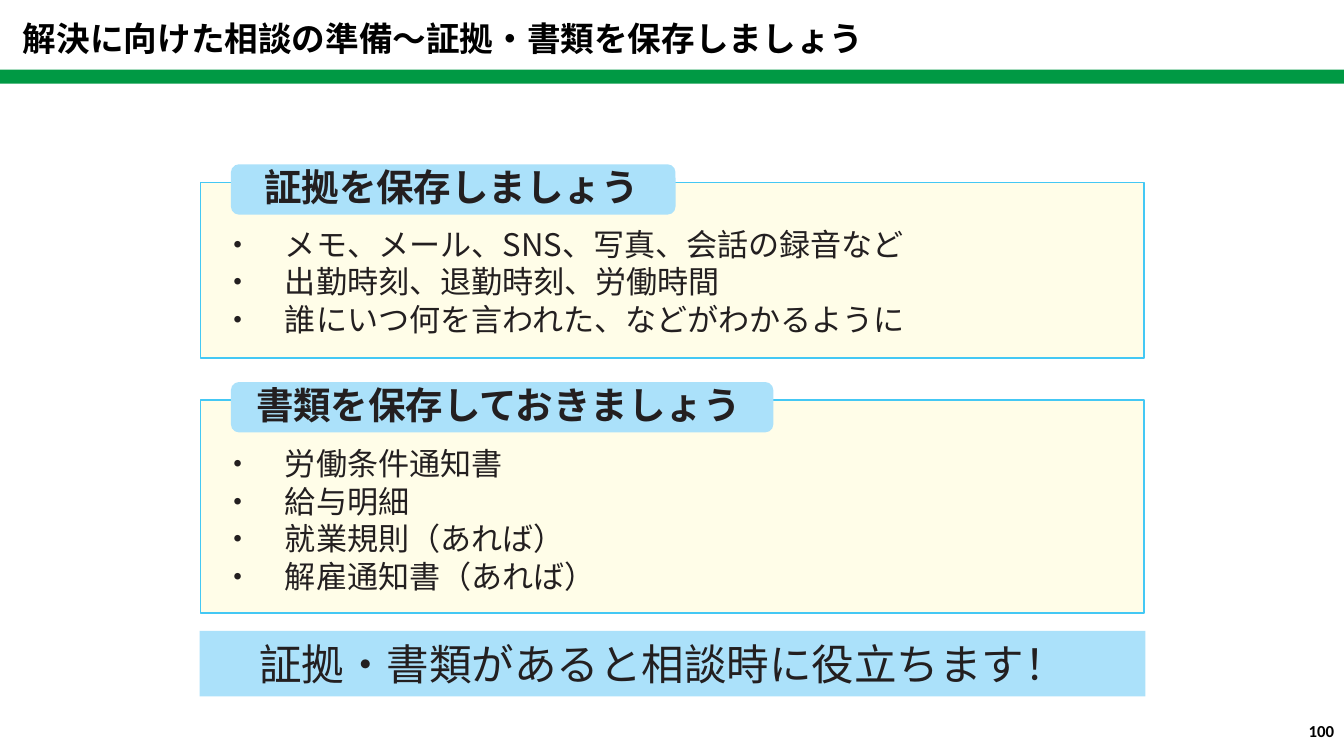
from dataclasses import dataclass

from lxml import etree
from pptx import Presentation
from pptx.dml.color import RGBColor
from pptx.enum.shapes import MSO_SHAPE
from pptx.enum.text import MSO_ANCHOR, PP_ALIGN
from pptx.oxml.ns import qn
from pptx.util import Inches, Pt

RECT = MSO_SHAPE.RECTANGLE
ROUNDED = MSO_SHAPE.ROUNDED_RECTANGLE
TOP, MIDDLE = MSO_ANCHOR.TOP, MSO_ANCHOR.MIDDLE
LEFT, RIGHT = PP_ALIGN.LEFT, PP_ALIGN.RIGHT


@dataclass(frozen=True)
class Theme:
    sky: str = "ABE1FA"
    cream: str = "FFFDE8"
    border: str = "44C8F4"
    green: str = "009944"
    ink: str = "231F20"
    black: str = "000000"
    japanese: str = "Noto Sans CJK JP"
    latin: str = "Calibri"
    title: float = 24
    heading: float = 26.8
    body: float = 22.2
    message: float = 30.4
    page: float = 12


THEME = Theme()

prs = Presentation()
prs.slide_width, prs.slide_height = Inches(13.33), Inches(7.5)
slide = prs.slides.add_slide(prs.slide_layouts[6])


def add_panel(kind, left, top, width, height, fill, line=None):
    panel = slide.shapes.add_shape(
        kind, Inches(left), Inches(top), Inches(width), Inches(height))
    panel.shadow.inherit = False
    panel.fill.solid()
    panel.fill.fore_color.rgb = RGBColor.from_string(fill)
    if line:
        panel.line.color.rgb = RGBColor.from_string(line)
        panel.line.width = Pt(1.25)
    else:
        panel.line.fill.background()
    return panel


def write(left, top, width, height, lines, *, size=THEME.body, bold=False,
          color=THEME.ink, font=THEME.japanese, align=LEFT, anchor=TOP,
          insets=(0.1, 0.05, 0.1, 0.05)):
    """Each line is its text and a dict that may set size, bold, indent, before."""
    box = slide.shapes.add_textbox(
        Inches(left), Inches(top), Inches(width), Inches(height))
    frame = box.text_frame
    frame.word_wrap = True
    frame.vertical_anchor = anchor
    (frame.margin_left, frame.margin_top,
     frame.margin_right, frame.margin_bottom) = map(Inches, insets)
    for index, (text, style) in enumerate(lines):
        paragraph = frame.paragraphs[0] if index == 0 else frame.add_paragraph()
        line_size = style.get("size", size)
        paragraph.alignment = align
        paragraph.line_spacing = Pt(round(line_size * 1.2, 1))
        paragraph.space_before = Pt(style.get("before", 0))
        properties = paragraph._p.get_or_add_pPr()
        properties.set("marL", str(Inches(style.get("indent", 0))))
        run = paragraph.add_run()
        run.text = text
        run.font.size = Pt(line_size)
        run.font.bold = style.get("bold", bold)
        run.font.color.rgb = RGBColor.from_string(color)
        run.font.name = font
        east_asian = etree.SubElement(run._r.get_or_add_rPr(), qn("a:ea"))
        east_asian.set("typeface", font)


# Closing message
add_panel(RECT, 1.98, 6.26, 9.38, 0.65, THEME.sky)
write(1.98, 6.26, 9.38, 0.65,
      [("証拠・書類があると相談時に役立ちます！", {"indent": 0.59})],
      size=THEME.message, anchor=MIDDLE, insets=(0, 0.07, 0, 0.07))

# Framed sections: frame top, frame height, tab width, heading, indent, gap, items
sections = [
    (1.81, 1.74, 4.41, "証拠を保存しましょう", 0.42, 11.2,
     ["メモ、メール、SNS、写真、会話の録音など",
      "出勤時刻、退勤時刻、労働時間",
      "誰にいつ何を言われた、などがわかるように"]),
    (3.97, 2.11, 5.38, "書類を保存しておきましょう", 0.34, 12.4,
     ["労働条件通知書", "給与明細", "就業規則（あれば）", "解雇通知書（あれば）"]),
]
for top, height, tab_width, heading, indent, gap, items in sections:
    add_panel(RECT, 1.99, top, 9.36, height, THEME.cream, THEME.border)
    tab = add_panel(ROUNDED, 2.29, top - 0.18, tab_width, 0.5, THEME.sky)
    tab.adjustments[0] = 0.16
    lines = [(heading, {"size": THEME.heading, "bold": True, "indent": indent})]
    for index, item in enumerate(items):
        before = gap if index == 0 else 0.3
        lines.append((f"・　{item}", {"indent": 0.01, "before": before}))
    write(2.2, top - 0.38, 7.6, height + 0.2, lines, insets=(0, 0.2, 0, 0))

# Title, rule and page number
add_panel(RECT, 0, 0.69, 13.33, 0.14, THEME.green)
write(0.13, 0.13, 9.84, 0.5,
      [("解決に向けた相談の準備～証拠・書類を保存しましょう", {})],
      size=THEME.title, bold=True, color=THEME.black)
write(10.22, 7.1, 3.11, 0.4, [("100", {})], size=THEME.page, bold=True,
      color=THEME.black, font=THEME.latin, align=RIGHT)

prs.save("out.pptx")
